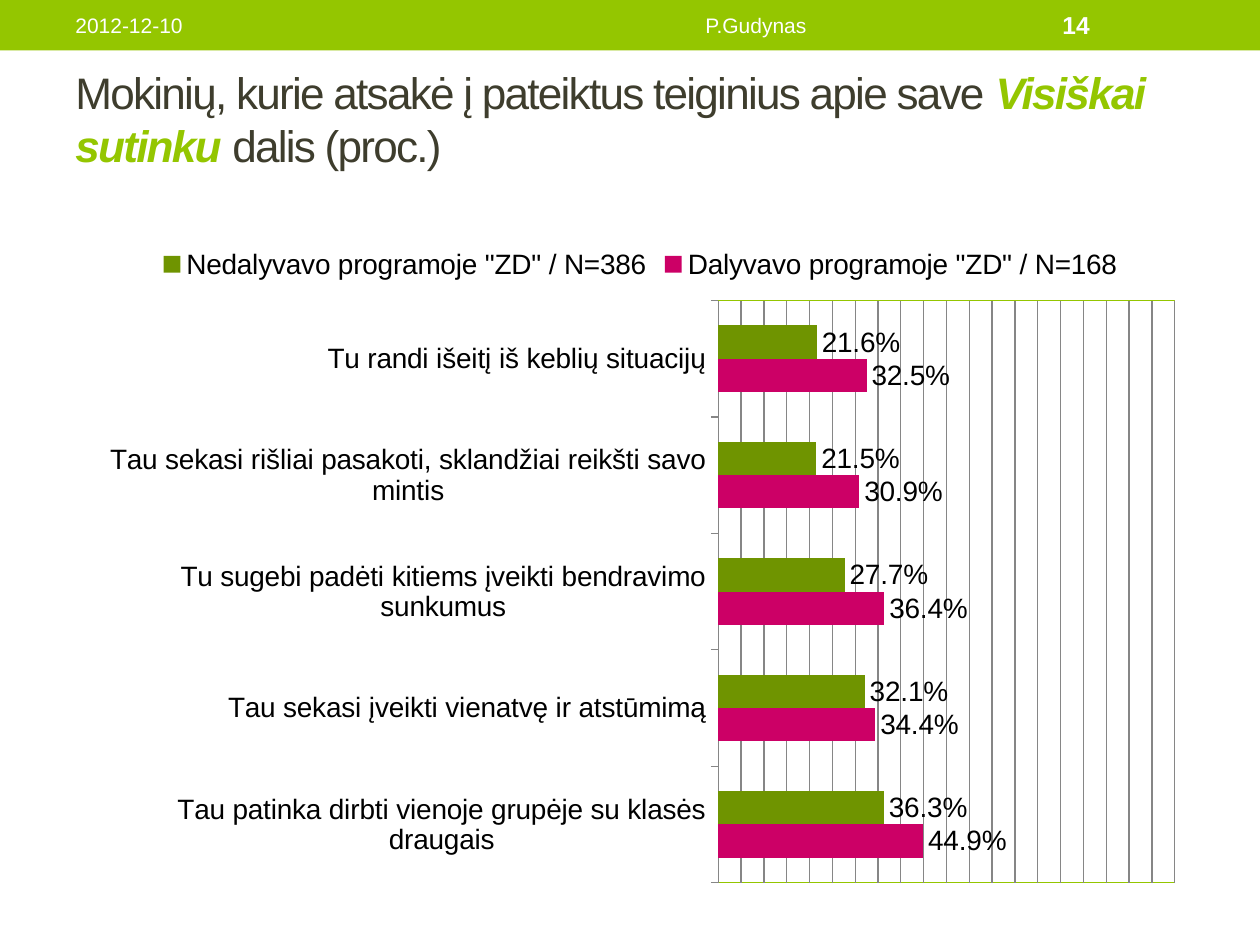
from dataclasses import dataclass

from lxml import etree
from pptx import Presentation
from pptx.chart.data import CategoryChartData
from pptx.dml.color import RGBColor
from pptx.enum.chart import XL_CHART_TYPE, XL_LABEL_POSITION, XL_LEGEND_POSITION, XL_TICK_LABEL_POSITION, XL_TICK_MARK
from pptx.enum.shapes import MSO_SHAPE
from pptx.enum.text import MSO_ANCHOR, PP_ALIGN
from pptx.oxml.ns import qn
from pptx.util import Pt

BAR = XL_CHART_TYPE.BAR_CLUSTERED
OUTSIDE = XL_LABEL_POSITION.OUTSIDE_END
TOP = XL_LEGEND_POSITION.TOP
LOW = XL_TICK_LABEL_POSITION.LOW
OUT = XL_TICK_MARK.OUTSIDE
RECT = MSO_SHAPE.RECTANGLE
MIDDLE = MSO_ANCHOR.MIDDLE
LEFT, CENTER = PP_ALIGN.LEFT, PP_ALIGN.CENTER


@dataclass(frozen=True)
class Theme:
    font: str = "Arial"
    green: RGBColor = RGBColor(0x94, 0xC6, 0x00)
    dark_green: RGBColor = RGBColor(0x6F, 0x94, 0x00)
    pink: RGBColor = RGBColor(0xCC, 0x00, 0x66)
    title: RGBColor = RGBColor(0x3E, 0x3D, 0x2D)
    grid: RGBColor = RGBColor(0x86, 0x86, 0x86)
    white: RGBColor = RGBColor(0xFF, 0xFF, 0xFF)
    black: RGBColor = RGBColor(0, 0, 0)
    title_size: float = 25.2
    chart_size: float = 16
    header_size: float = 12
    number_size: float = 14


THEME = Theme()

CATEGORIES = [
    "Tau patinka dirbti vienoje grupėje su klasės draugais",
    "Tau sekasi įveikti vienatvę ir atstūmimą",
    "Tu sugebi padėti kitiems įveikti bendravimo sunkumus",
    "Tau sekasi rišliai pasakoti, sklandžiai reikšti savo mintis",
    "Tu randi išeitį iš keblių situacijų",
]
SERIES = [
    ('Dalyvavo programoje "ZD" / N=168', [0.449, 0.344, 0.364, 0.309, 0.325], THEME.pink),
    ('Nedalyvavo programoje "ZD" / N=386', [0.363, 0.321, 0.277, 0.215, 0.216], THEME.dark_green),
]


def style_font(font, size, color, bold=False, italic=False):
    font.name = THEME.font
    font.size = Pt(size)
    font.bold = bold
    font.italic = italic
    font.color.rgb = color


def add_text_box(page, left, top, width, height):
    box = page.shapes.add_textbox(Pt(left), Pt(top), Pt(width), Pt(height))
    box.text_frame.word_wrap = True
    box.text_frame.vertical_anchor = MIDDLE
    return box


def add_header(page, left, top, width, height):
    band = page.shapes.add_shape(RECT, Pt(left), Pt(top), Pt(width), Pt(height))
    band.shadow.inherit = False
    band.fill.solid()
    band.fill.fore_color.rgb = THEME.green
    band.line.fill.background()

    # Date, author and page number
    entries = [
        ("2012-12-10", 36, 228, LEFT, THEME.header_size, False),
        ("P.Gudynas", 270, 324, CENTER, THEME.header_size, False),
        ("14", 600, 84, LEFT, THEME.number_size, True),
    ]
    for text, offset, entry_width, align, size, bold in entries:
        box = add_text_box(page, left + offset, top + 1.5, entry_width, height - 3)
        para = box.text_frame.paragraphs[0]
        para.text = text
        para.alignment = align
        style_font(para.runs[0].font, size, THEME.white, bold)


def add_title(page, left, top, width, height):
    box = add_text_box(page, left, top, width, height)
    box.text_frame.margin_top = 0
    box.text_frame.margin_bottom = Pt(26)  # room for an unused third line
    para = box.text_frame.paragraphs[0]
    parts = [
        ("Mokinių, kurie atsakė į pateiktus teiginius apie save ", False),
        ("Visiškai sutinku ", True),
        ("dalis (proc.)", False),
    ]
    for text, accent in parts:
        span = para.add_run()
        span.text = text
        color = THEME.green if accent else THEME.title
        style_font(span.font, THEME.title_size, color, accent, accent)
        span.font._element.set("spc", "-100")


def set_plot_layout(chart, x, y, width, height):
    """Fix the inner plot area, in fractions of the chart, and outline it."""
    plot_area = chart._chartSpace.chart.plotArea
    for old in plot_area.findall(qn("c:layout")):
        plot_area.remove(old)
    layout = etree.Element(qn("c:layout"))
    manual = etree.SubElement(layout, qn("c:manualLayout"))
    settings = [("layoutTarget", "inner"), ("xMode", "edge"), ("yMode", "edge"),
                ("x", x), ("y", y), ("w", width), ("h", height)]
    for name, value in settings:
        etree.SubElement(manual, qn(f"c:{name}")).set("val", str(value))
    plot_area.insert(0, layout)

    outline = etree.SubElement(etree.SubElement(plot_area, qn("c:spPr")), qn("a:ln"))
    outline.set("w", str(Pt(0.75)))
    fill = etree.SubElement(outline, qn("a:solidFill"))
    etree.SubElement(fill, qn("a:srgbClr")).set("val", str(THEME.green))


def add_answer_chart(page, left, top, width, height):
    data = CategoryChartData(number_format="0.0%")
    data.categories = CATEGORIES
    for name, values, _ in SERIES:
        data.add_series(name, values)
    chart = page.shapes.add_chart(BAR, Pt(left), Pt(top), Pt(width), Pt(height), data).chart
    style_font(chart.font, THEME.chart_size, THEME.black)
    chart.has_title = False
    chart.has_legend = True
    chart.legend.position = TOP
    chart.legend.include_in_layout = False

    # Bars and their labels
    plot = chart.plots[0]
    plot.vary_by_categories = False
    plot.gap_width = 150
    plot.overlap = 0
    for series, (_, _, color) in zip(plot.series, SERIES):
        series.format.fill.solid()
        series.format.fill.fore_color.rgb = color
    plot.has_data_labels = True
    labels = plot.data_labels
    labels.show_value = True
    labels.position = OUTSIDE
    labels.number_format = "0.0%"
    labels.number_format_is_linked = False
    style_font(labels.font, THEME.chart_size, THEME.black)

    # Axes and grid
    values = chart.value_axis
    values.minimum_scale, values.maximum_scale, values.major_unit = 0, 1, 0.05
    values.has_major_gridlines = True
    values.visible = False
    categories = chart.category_axis
    categories.major_tick_mark = OUT
    categories.tick_label_position = LOW
    for line in (values.major_gridlines.format.line, categories.format.line):
        line.color.rgb = THEME.grid
        line.width = Pt(0.75)
    set_plot_layout(chart, 0.57, 0.1, 0.41, 0.88)


def main():
    deck = Presentation()
    deck.slide_width, deck.slide_height = Pt(720), Pt(540)
    page = deck.slides.add_slide(deck.slide_layouts[6])
    add_header(page, 0, 0, 720, 28.8)
    add_title(page, 36, 41.76, 648, 77.76)
    add_answer_chart(page, 48, 134, 636, 378)
    deck.save("out.pptx")


if __name__ == "__main__":
    main()
